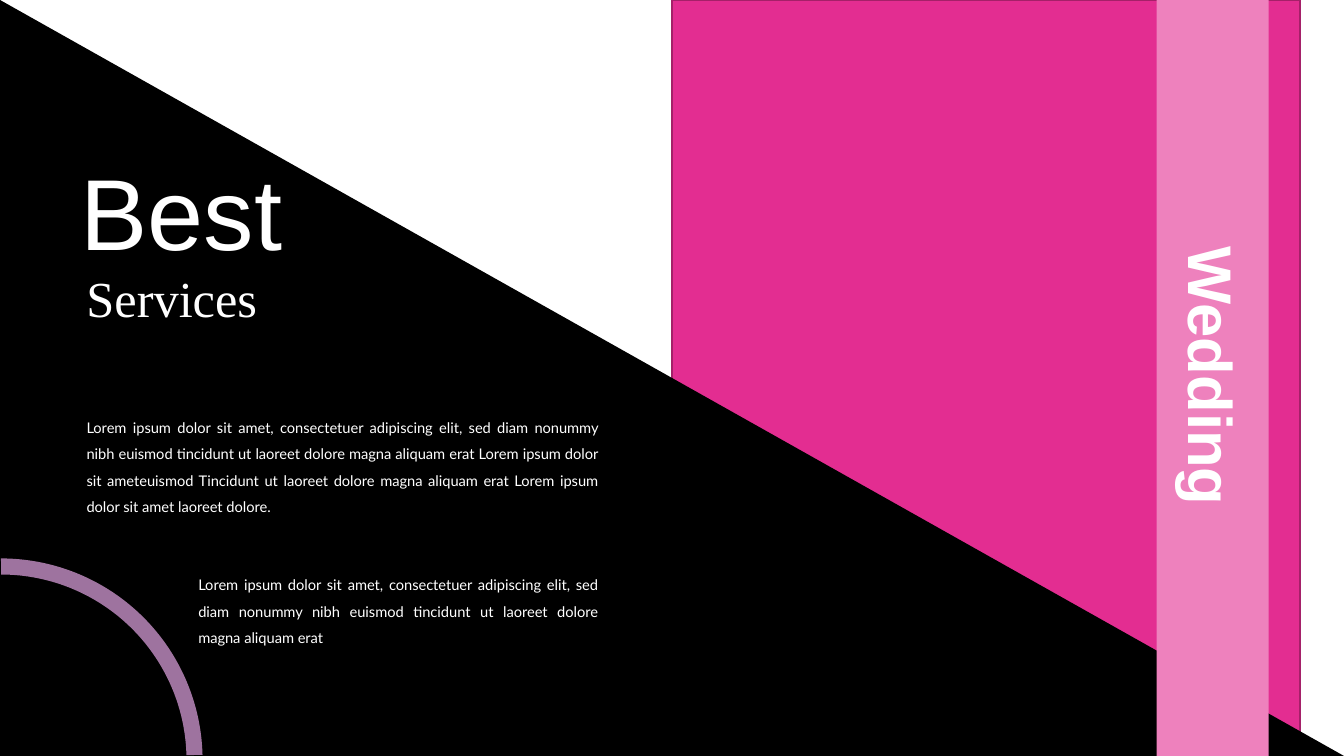
from dataclasses import dataclass
from typing import Optional

from lxml.etree import SubElement
from pptx import Presentation
from pptx.dml.color import RGBColor as Rgb
from pptx.enum.shapes import MSO_SHAPE as Preset
from pptx.enum.text import PP_ALIGN as Align
from pptx.oxml.ns import qn
from pptx.slide import Slide
from pptx.util import Pt

COLORS = {
    "black": "000000",
    "white": "FFFFFF",
    "pink": "E32D91",
    "pink_edge": "A52069",
    "band": "EE81BD",
    "arc": "EAAAEB",
}
WIDTH, HEIGHT = 960, 540


@dataclass(frozen=True)
class Box:
    left: float
    top: float
    width: float
    height: float
    rotation: float = 0


@dataclass(frozen=True)
class Panel:
    preset: Preset
    box: Box
    fill: str
    edge: Optional[str] = None
    adjustments: tuple[float, ...] = ()
    opacity: Optional[int] = None


@dataclass(frozen=True)
class Caption:
    text: str
    box: Box
    font: str
    size: float
    align: Align = Align.LEFT
    spacing: float = 1.0
    bold: bool = False


def body_copy(text: str, box: Box) -> Caption:
    return Caption(text, box, "Lato", 10.5, Align.JUSTIFY, 1.5)


def color(name: str) -> Rgb:
    return Rgb.from_string(COLORS[name])


def lengths(box: Box) -> tuple[Pt, ...]:
    return Pt(box.left), Pt(box.top), Pt(box.width), Pt(box.height)


def draw_panel(slide: Slide, panel: Panel) -> None:
    shape = slide.shapes.add_shape(panel.preset, *lengths(panel.box))
    shape.rotation = panel.box.rotation
    shape.shadow.inherit = False
    for index, value in enumerate(panel.adjustments):
        shape.adjustments[index] = value
    shape.fill.solid()
    shape.fill.fore_color.rgb = color(panel.fill)
    if panel.opacity is not None:
        tint = shape.fill._xPr.find(qn("a:solidFill"))[0]
        SubElement(tint, qn("a:alpha"), val=str(panel.opacity * 1000))
    if panel.edge:
        shape.line.color.rgb = color(panel.edge)
        shape.line.width = Pt(1)
    else:
        shape.line.fill.background()


def draw_caption(slide: Slide, caption: Caption) -> None:
    holder = slide.shapes.add_textbox(*lengths(caption.box))
    holder.rotation = caption.box.rotation
    holder.text_frame.word_wrap = True
    paragraph = holder.text_frame.paragraphs[0]
    paragraph.alignment = caption.align
    paragraph.line_spacing = caption.spacing
    run = paragraph.add_run()
    run.text = caption.text
    run.font.name = caption.font
    run.font.size = Pt(caption.size)
    run.font.bold = caption.bold
    run.font.color.rgb = color("white")


BACKDROP = [
    Panel(Preset.RECTANGLE, Box(480, 0, 448.6, HEIGHT), "pink", edge="pink_edge"),
    Panel(Preset.RIGHT_TRIANGLE, Box(0, 0, WIDTH, HEIGHT), "black"),
]
SERVICES = [
    Caption("Best", Box(50.4, 103.7, 161.3, 113.8), "Arial", 72),
    Caption("Services", Box(54.7, 187.2, 177.8, 51.1), "Times New Roman", 36),
    body_copy(
        "Lorem ipsum dolor sit amet, consectetuer adipiscing elit, sed diam nonummy "
        "nibh euismod tincidunt ut laoreet dolore magna aliquam erat Lorem ipsum dolor "
        "sit ameteuismod Tincidunt ut laoreet dolore magna aliquam erat Lorem ipsum "
        "dolor sit amet laoreet dolore.",
        Box(54.7, 289.4, 380.2, 81.4),
    ),
    body_copy(
        "Lorem ipsum dolor sit amet, consectetuer adipiscing elit, sed diam nonummy "
        "nibh euismod tincidunt ut laoreet dolore magna aliquam erat",
        Box(134.6, 401.8, 300.2, 61.9),
    ),
]
BAND = Panel(Preset.RECTANGLE, Box(596.2, 230, HEIGHT, 80, 90), "band")
WEDDING = Caption(
    "Wedding", Box(688.3, 238.3, 355.7, 60.5, 90), "Arial", 44, Align.CENTER, bold=True
)
CORNER_ARC = Panel(
    Preset.BLOCK_ARC,
    Box(-143.3, 398.9, 288, 288, 90),
    "arc",
    adjustments=(108, 161.11, 0.04),
    opacity=68,
)


def main() -> None:
    deck = Presentation()
    deck.slide_width, deck.slide_height = Pt(WIDTH), Pt(HEIGHT)
    slide = deck.slides.add_slide(deck.slide_layouts[6])
    for item in [*BACKDROP, *SERVICES, BAND, WEDDING, CORNER_ARC]:
        if isinstance(item, Panel):
            draw_panel(slide, item)
        else:
            draw_caption(slide, item)
    deck.save("out.pptx")


if __name__ == "__main__":
    main()
